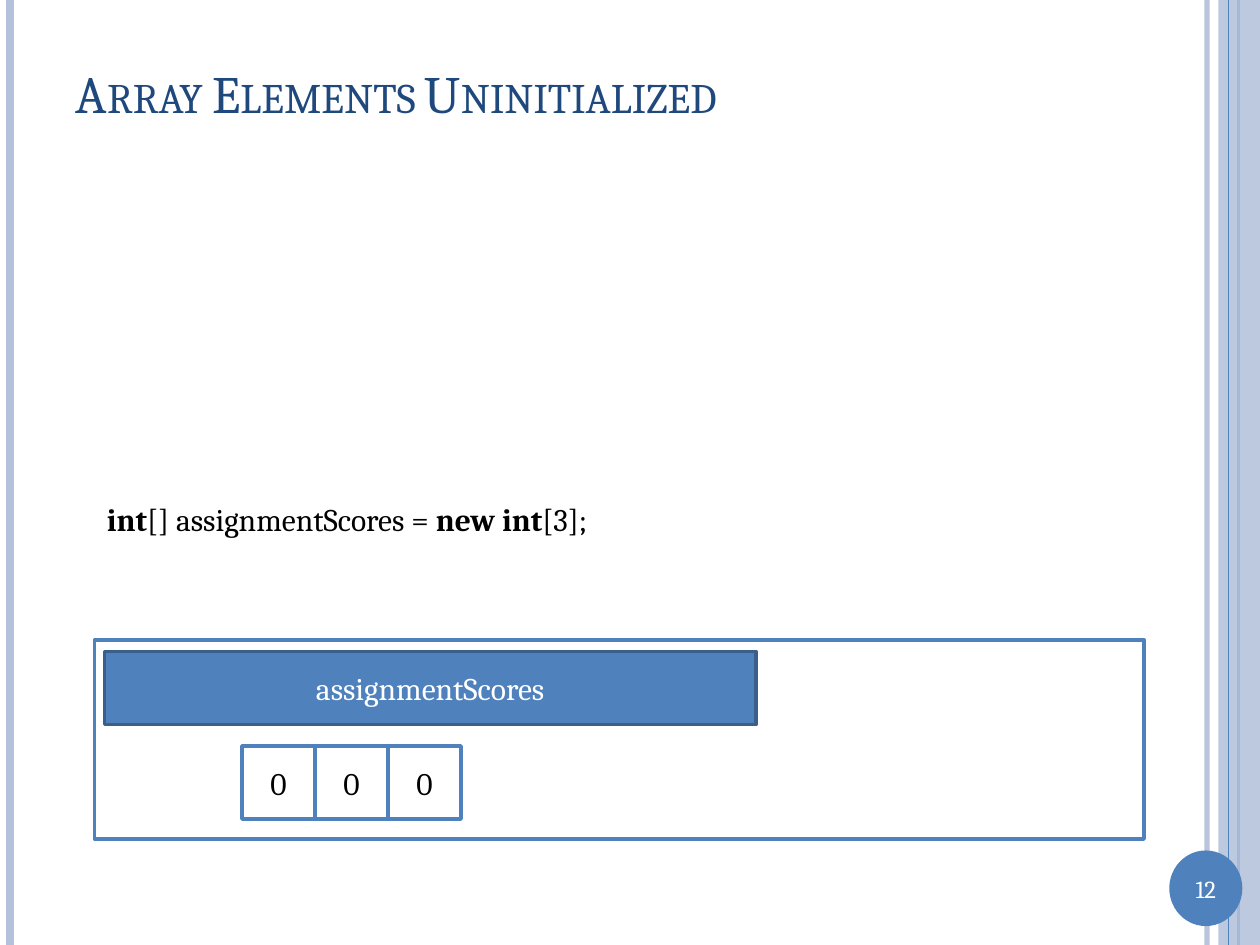
from lxml import etree
from pptx import Presentation
from pptx.dml.color import RGBColor
from pptx.enum import shapes, text
from pptx.oxml import ns
from pptx.util import Inches, Pt

COLORS = {"white": "FFFFFF", "black": "000000", "blue": "4F81BD", "pale": "B3C1DB",
          "navy": "1F497D", "edge": "3A5F8C"}
FONT = "Cambria"


def rgb(name):
    """Return the palette colour with this name."""
    return RGBColor.from_string(COLORS[name])


def set_alpha(shape, percent):
    """Make the first colour of a shape partly transparent."""
    color = shape._element.spPr.find(".//" + ns.qn("a:srgbClr"))
    etree.SubElement(color, ns.qn("a:alpha"), val=str(percent * 1000))


def write(shape, runs, size, color, align=text.PP_ALIGN.LEFT):
    """Write (words, bold) runs as one vertically centred paragraph."""
    frame = shape.text_frame
    frame.word_wrap = True
    frame.vertical_anchor = text.MSO_ANCHOR.MIDDLE
    para = frame.paragraphs[0]
    para.alignment = align
    para.font.name, para.font.size = FONT, Pt(size)
    para.font.color.rgb = rgb(color)
    for words, bold in runs:
        span = para.add_run()
        span.text = words
        span.font.bold = bold


def add_block(page, box, fill, line=None, label="", color="black",
              kind=shapes.MSO_SHAPE.RECTANGLE, size=18):
    """Add a flat filled shape with an optional outline and centred label."""
    block = page.shapes.add_shape(kind, *map(Inches, box))
    block.shadow.inherit = False
    block.fill.solid()
    block.fill.fore_color.rgb = rgb(fill)
    if line:
        block.line.color.rgb = rgb(line)
        block.line.width = Pt(2)
    else:
        block.line.fill.background()
    if label:
        write(block, [(label, False)], size, color, text.PP_ALIGN.CENTER)
    return block


def add_rule(page, x, height, color, width):
    """Add a vertical rule from the top of the page."""
    rule = page.shapes.add_connector(shapes.MSO_CONNECTOR.STRAIGHT,
                                     Inches(x), 0, Inches(x), Inches(height))
    rule.line.color.rgb = rgb(color)
    rule.line.width = Pt(width)
    etree.SubElement(rule._element.spPr, ns.qn("a:effectLst"))
    return rule


def add_frame(page, width, height):
    """Draw the side bands and the page number badge."""
    set_alpha(add_rule(page, width - 0.42, height, "pale", 3), 93)
    add_rule(page, 0.08, height, "pale", 4.5)
    add_rule(page, width - 0.17, height, "blue", 1.5)
    set_alpha(add_block(page, (width - 0.33, 0, 0.33, height), "pale"), 87)
    add_rule(page, width - 0.25, height, "blue", 0.75)
    badge = add_block(page, (width - 0.72, height - 0.75, 0.58, 0.6), "blue", label="12",
                      color="white", kind=shapes.MSO_SHAPE.OVAL, size=14)
    badge.text_frame.margin_left = badge.text_frame.margin_right = 0


def add_title(page, box, words):
    """Place the title in small capitals."""
    title = page.shapes.title
    title.left, title.top, title.width, title.height = map(Inches, box)
    write(title, [(words, False)], 30, "navy")
    for span in title.text_frame.paragraphs[0].runs:
        span.font._element.set("cap", "small")


def add_code(page, box):
    """Place the array declaration with bold keywords."""
    code = page.shapes.add_textbox(*map(Inches, box))
    write(code, [("int", True), ("[] assignmentScores = ", False),
                 ("new int", True), ("[3];", False)], 18, "black")


def add_memory(page, box, name, values):
    """Draw the memory panel: variable name above a row of cells."""
    left, top, width, height = box
    cell = 0.58
    add_block(page, box, "white", "blue")
    add_block(page, (left + 0.08, top + 0.09, 5.17, cell), "blue", "edge", name, "white")
    for index, value in enumerate(values):
        add_block(page, (left + 1.17 + index * cell, top + 0.84, cell, cell),
                  "white", "blue", str(value))


def main():
    """Build and save the slide."""
    deck = Presentation()
    deck.slide_width, deck.slide_height = Inches(10), Inches(7.5)
    page = deck.slides.add_slide(deck.slide_layouts[5])
    add_frame(page, 10, 7.5)
    add_title(page, (0.5, 0.3, 8.67, 0.87), "Array Elements Uninitialized")
    add_code(page, (0.75, 3.83, 8.33, 0.58))
    add_memory(page, (0.75, 5.08, 8.33, 1.58), "assignmentScores", [0, 0, 0])
    deck.save("out.pptx")


if __name__ == "__main__":
    main()
